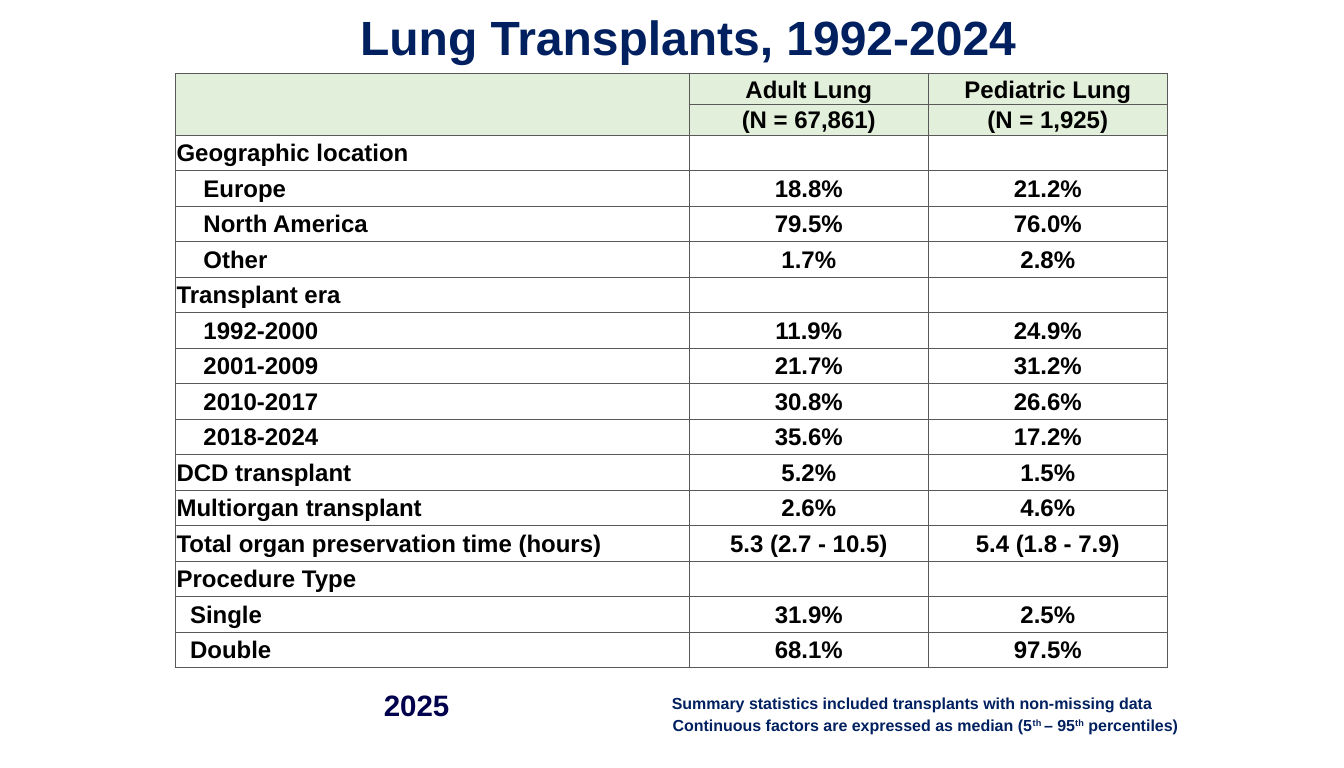
from dataclasses import dataclass

from lxml.etree import SubElement
from pptx import Presentation
from pptx.dml.color import RGBColor
from pptx.enum.text import MSO_ANCHOR as Anchor, MSO_AUTO_SIZE as AutoSize, PP_ALIGN as Align
from pptx.oxml.ns import qn
from pptx.util import Inches, Pt

NAVY = "002060"
BLACK = "000000"
HEADER_GREEN = "E2EFDA"
BORDER_GRAY = "595959"
INDENT = 0.28
HALF_INDENT = 0.14
COLUMN_WIDTHS = (5.35, 2.49, 2.49)
HEADER_ROWS = 2
HEADER_HEIGHT, BODY_HEIGHT = 0.32, 0.37


@dataclass(frozen=True)
class Row:
    label: str
    adult: str = ""
    pediatric: str = ""
    indent: float = 0


@dataclass(frozen=True)
class Note:
    left: float
    top: float
    width: float
    height: float
    pieces: tuple[str, ...]
    size: float = 12
    color: str = NAVY
    align: Align = Align.LEFT


ROWS = (
    Row("", "Adult Lung", "Pediatric Lung"),
    Row("", "(N = 67,861)", "(N = 1,925)"),
    Row("Geographic location"),
    Row("Europe", "18.8%", "21.2%", INDENT),
    Row("North America", "79.5%", "76.0%", INDENT),
    Row("Other", "1.7%", "2.8%", INDENT),
    Row("Transplant era"),
    Row("1992-2000", "11.9%", "24.9%", INDENT),
    Row("2001-2009", "21.7%", "31.2%", INDENT),
    Row("2010-2017", "30.8%", "26.6%", INDENT),
    Row("2018-2024", "35.6%", "17.2%", INDENT),
    Row("DCD transplant", "5.2%", "1.5%"),
    Row("Multiorgan transplant", "2.6%", "4.6%"),
    Row("Total organ preservation time (hours)", "5.3 (2.7 - 10.5)", "5.4 (1.8 - 7.9)"),
    Row("Procedure Type"),
    Row("Single", "31.9%", "2.5%", HALF_INDENT),
    Row("Double", "68.1%", "97.5%", HALF_INDENT),
)

# Every second piece of a note is superscript.
NOTES = (
    Note(3.31, 7.11, 2.06, 0.47, ("2025",), 22.1, "00004C", Align.CENTER),
    Note(5.89, 7.4, 7.5, 0.3,
         ("Continuous factors are expressed as median (5", "th ", "– 95", "th", " percentiles)"),
         align=Align.CENTER),
    Note(6.9, 7.18, 7.1, 0.3,
         ("Summary statistics included transplants with non-missing data",)),
)


def rgb(color: str) -> RGBColor:
    return RGBColor.from_string(color)


def write(frame, *pieces: str, size: float, color: str, align: Align) -> None:
    """Fill the first paragraph, raising every second piece."""
    para = frame.paragraphs[0]
    para.alignment = align
    para.font.size = Pt(size)
    for index, piece in enumerate(pieces):
        span = para.add_run()
        span.text = piece
        span.font.name = "Arial"
        span.font.size = Pt(size)
        span.font.bold = True
        span.font.color.rgb = rgb(color)
        if index % 2:
            span.font._element.set("baseline", "30000")


def add_borders(cell) -> None:
    properties = cell._tc.get_or_add_tcPr()
    for side in ("a:lnL", "a:lnR", "a:lnT", "a:lnB"):
        line = SubElement(properties, qn(side), w=str(Pt(1)))
        fill = SubElement(line, qn("a:solidFill"))
        SubElement(fill, qn("a:srgbClr"), val=BORDER_GRAY)


def format_cell(cell, text: str, fill: str | None, align: Align, indent: float) -> None:
    add_borders(cell)
    if fill:
        cell.fill.solid()
        cell.fill.fore_color.rgb = rgb(fill)
    else:
        cell.fill.background()
    cell.vertical_anchor = Anchor.MIDDLE
    cell.margin_left = Inches(0.01 + indent)
    cell.margin_top = cell.margin_right = Inches(0.01)
    cell.margin_bottom = 0
    pieces = (text,) if text else ()
    write(cell.text_frame, *pieces, size=18, color=BLACK, align=align)


def add_title(slide) -> None:
    title = slide.shapes.title
    title.left, title.top = Inches(2.17), Inches(-0.16)
    title.width, title.height = Inches(10), Inches(1.08)
    frame = title.text_frame
    frame.auto_size = AutoSize.NONE
    frame.vertical_anchor = Anchor.MIDDLE
    write(frame, "Lung Transplants, 1992-2024", size=36, color=NAVY, align=Align.CENTER)


def add_note(slide, note: Note) -> None:
    box = slide.shapes.add_textbox(
        Inches(note.left), Inches(note.top), Inches(note.width), Inches(note.height))
    box.text_frame.word_wrap = True
    box.text_frame.auto_size = AutoSize.SHAPE_TO_FIT_TEXT
    write(box.text_frame, *note.pieces, size=note.size, color=note.color, align=note.align)


def add_statistics(slide) -> None:
    table = slide.shapes.add_table(
        len(ROWS), len(COLUMN_WIDTHS),
        Inches(1.83), Inches(0.77), Inches(10.33), Inches(6.18)).table
    table.first_row = table.horz_banding = False
    for column, width in zip(table.columns, COLUMN_WIDTHS):
        column.width = Inches(width)
    for index, row in enumerate(ROWS):
        is_header = index < HEADER_ROWS
        table.rows[index].height = Inches(HEADER_HEIGHT if is_header else BODY_HEIGHT)
        fill = HEADER_GREEN if is_header else None
        format_cell(table.cell(index, 0), row.label, fill, Align.LEFT, row.indent)
        for column, value in enumerate((row.adult, row.pediatric), start=1):
            format_cell(table.cell(index, column), value, fill, Align.CENTER, 0)
    table.cell(0, 0).merge(table.cell(HEADER_ROWS - 1, 0))


def main() -> None:
    deck = Presentation()
    deck.slide_width, deck.slide_height = Inches(14), Inches(8)
    slide = deck.slides.add_slide(deck.slide_layouts.get_by_name("Title Only"))
    add_title(slide)
    for note in NOTES:
        add_note(slide, note)
    add_statistics(slide)
    deck.save("out.pptx")


if __name__ == "__main__":
    main()
